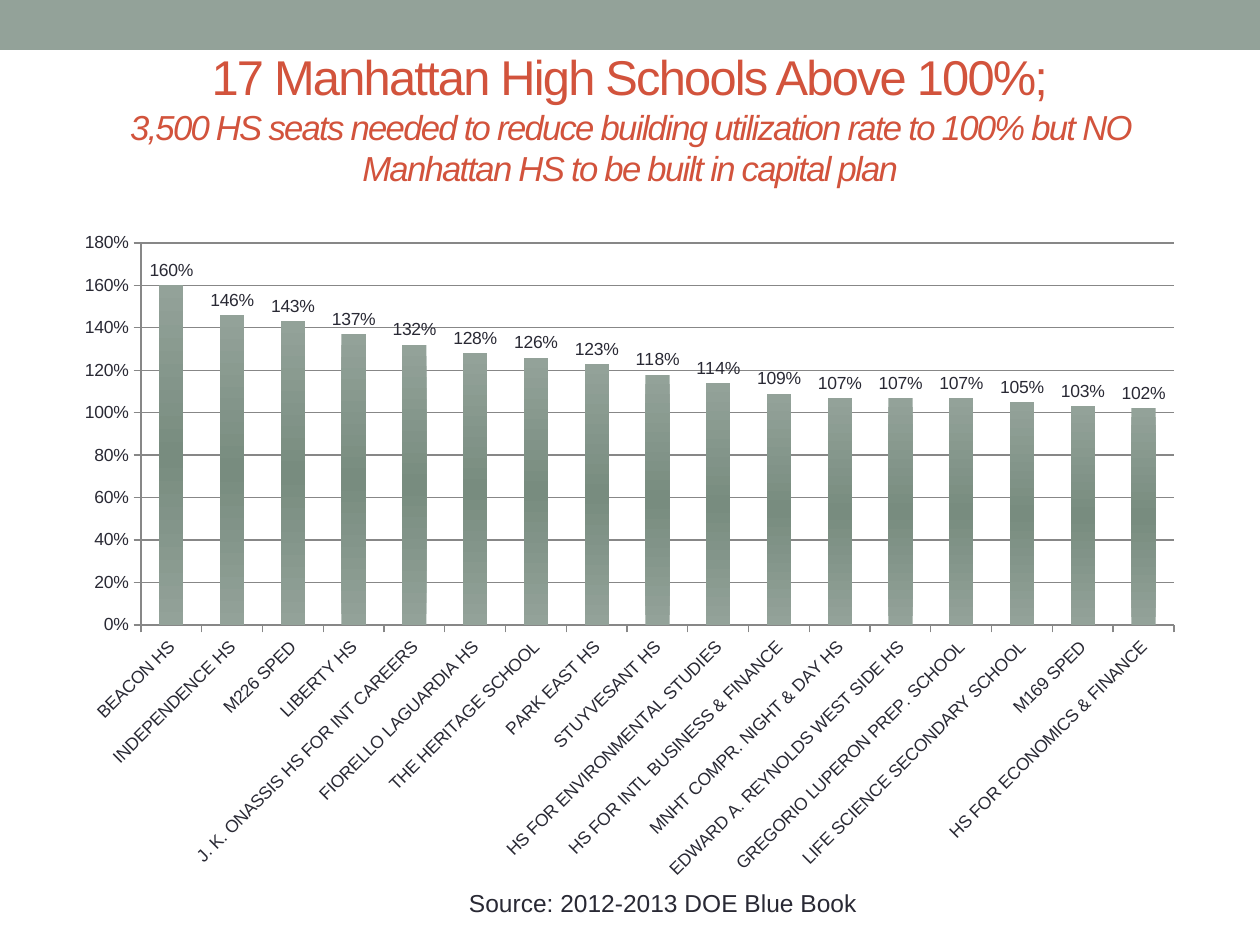
from copy import deepcopy

from lxml.etree import SubElement
from pptx import Presentation
from pptx.chart.data import CategoryChartData
from pptx.dml.color import RGBColor
from pptx.enum.chart import XL_CHART_TYPE, XL_LABEL_POSITION, XL_TICK_MARK
from pptx.enum.shapes import MSO_SHAPE
from pptx.enum.text import MSO_ANCHOR, PP_ALIGN
from pptx.oxml.ns import qn
from pptx.util import Pt

# Content
HEADLINE = "17 Manhattan High Schools Above 100%;"
SUBHEAD = ("3,500 HS seats needed to reduce building utilization rate to 100% "
           "but NO Manhattan HS to be built in capital plan")
SOURCE = "Source: 2012-2013 DOE Blue Book"
UTILIZATION = [
    ("BEACON HS", 1.6),
    ("INDEPENDENCE HS", 1.46),
    ("M226 SPED", 1.43),
    ("LIBERTY HS", 1.37),
    ("J. K. ONASSIS HS FOR INT CAREERS", 1.32),
    ("FIORELLO LAGUARDIA HS", 1.28),
    ("THE HERITAGE SCHOOL", 1.26),
    ("PARK EAST HS", 1.23),
    ("STUYVESANT HS", 1.18),
    ("HS FOR ENVIRONMENTAL STUDIES", 1.14),
    ("HS FOR INTL BUSINESS & FINANCE", 1.09),
    ("MNHT COMPR. NIGHT & DAY HS", 1.07),
    ("EDWARD A. REYNOLDS WEST SIDE HS", 1.07),
    ("GREGORIO LUPERON PREP. SCHOOL", 1.07),
    ("LIFE SCIENCE SECONDARY SCHOOL", 1.05),
    ("M169 SPED", 1.03),
    ("HS FOR ECONOMICS & FINANCE", 1.02),
]
COLORS = {"sage": "93A299", "deep sage": "788C7F", "headline": "D2533C",
          "ink": "292934", "rule": "878787"}
FONT = "Arial"

# Places in px: left, top, width, height
SLIDE = (1260, 945)
BAND = (0, 0, 1260, 50)
TITLE = (63, 73, 1134, 136)
CHART = (63, 220, 1134, 672)
PLOT = (141, 243, 1033, 382)
CREDIT = (66, 882, 1194, 43)


def px(length):
    return round(length * 914400 / 126)


def box(place):
    return [px(length) for length in place]


def color(name):
    return RGBColor.from_string(COLORS[name])


def style_font(font, size, name, italic=False):
    for key, value in {"name": FONT, "size": Pt(size), "italic": italic}.items():
        setattr(font, key, value)
    font.color.rgb = color(name)


def add_text(place, lines, name, spacing=0, **frame_format):
    frame = slide.shapes.add_textbox(*box(place)).text_frame
    for key, value in {"word_wrap": True, **frame_format}.items():
        setattr(frame, key, value)
    paragraph = frame.paragraphs[0]
    paragraph.alignment = PP_ALIGN.CENTER
    for index, (text, size, italic) in enumerate(lines):
        if index:
            paragraph.add_line_break()
        run = paragraph.add_run()
        run.text = text
        style_font(run.font, size, name, italic)
        if spacing:
            run.font._element.set("spc", str(spacing))


prs = Presentation()
prs.slide_width, prs.slide_height = box(SLIDE)
slide = prs.slides.add_slide(prs.slide_layouts[6])

# Top band
band = slide.shapes.add_shape(MSO_SHAPE.RECTANGLE, *box(BAND))
band.shadow.inherit = False
band.fill.solid()
band.fill.fore_color.rgb = color("sage")
band.line.fill.background()

# Title, lifted towards the band by its bottom margin
add_text(TITLE, [(HEADLINE, 27.9, False), (SUBHEAD, 19.8, True)], "headline",
         spacing=-100, vertical_anchor=MSO_ANCHOR.MIDDLE,
         margin_top=0, margin_bottom=px(46))

# Chart
data = CategoryChartData(number_format="0%")
data.categories = [school for school, rate in UTILIZATION]
data.add_series("Series 1", [rate for school, rate in UTILIZATION])
chart = slide.shapes.add_chart(XL_CHART_TYPE.COLUMN_CLUSTERED, *box(CHART), data).chart
chart.has_title = False
chart.has_legend = False
style_font(chart.font, 10, "ink")

# Bars: dark in the middle, light at both ends
plot = chart.plots[0]
plot.gap_width = 150
plot.vary_by_categories = False
bar_fill = plot.series[0].format.fill
bar_fill.gradient()
bar_fill.gradient_angle = 90
stop_list = bar_fill._xPr.find(qn("a:gradFill")).find(qn("a:gsLst"))
stop_list.append(deepcopy(stop_list[0]))
for stop, position, name in zip(bar_fill.gradient_stops, (0, 0.5, 1),
                                ("sage", "deep sage", "sage")):
    stop.position = position
    stop.color.rgb = color(name)

# Value labels
plot.has_data_labels = True
labels = plot.data_labels
for key, value in {"show_value": True, "number_format": "0%",
                   "number_format_is_linked": False,
                   "position": XL_LABEL_POSITION.OUTSIDE_END}.items():
    setattr(labels, key, value)
style_font(labels.font, 10, "ink")

# Axes
schools, rates = chart.category_axis, chart.value_axis
for axis in (schools, rates):
    axis.major_tick_mark = XL_TICK_MARK.OUTSIDE
    axis.minor_tick_mark = XL_TICK_MARK.NONE
    style_font(axis.tick_labels.font, 10, "ink")
for key, value in {"minimum_scale": 0, "maximum_scale": 1.8, "major_unit": 0.2,
                   "has_major_gridlines": True}.items():
    setattr(rates, key, value)
rates.tick_labels.number_format = "0%"
rates.tick_labels.number_format_is_linked = False
for part in (schools, rates, rates.major_gridlines):
    part.format.line.color.rgb = color("rule")
    part.format.line.width = Pt(0.75)
schools._element.find(qn("c:txPr")).find(qn("a:bodyPr")).set("rot", str(-45 * 60000))

# Plot area as fractions of the chart
plot_area = chart._chartSpace.chart.plotArea
layout = plot_area.find(qn("c:layout"))
if layout is None:
    layout = SubElement(plot_area, qn("c:layout"))
    plot_area.insert(0, layout)
manual = SubElement(layout, qn("c:manualLayout"))
left, top, width, height = CHART
fractions = {"x": (PLOT[0] - left) / width, "y": (PLOT[1] - top) / height,
             "w": PLOT[2] / width, "h": PLOT[3] / height}
settings = {"layoutTarget": "inner", "xMode": "edge", "yMode": "edge", **fractions}
for tag, value in settings.items():
    SubElement(manual, qn(f"c:{tag}")).set("val", str(value))

# Source line
add_text(CREDIT, [(SOURCE, 14, False)], "ink")

prs.save("out.pptx")
